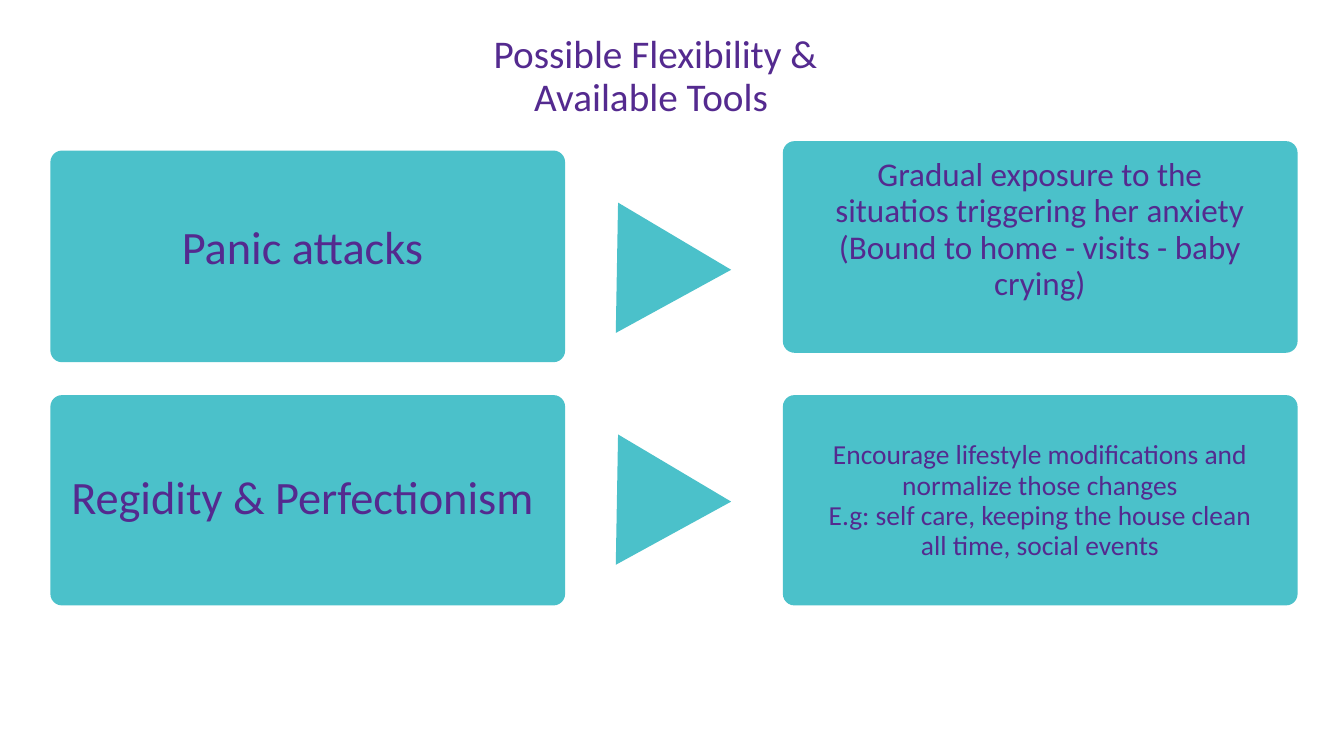
"""Build the slide pairing two difficulties with their available tools."""
from pptx import Presentation
from pptx import util as u
from pptx.dml.color import RGBColor
from pptx.enum import shapes, text

TEAL = RGBColor(0x4B, 0xC1, 0xCA)
PURPLE = RGBColor(0x54, 0x2A, 0x8F)
FONT = {"name": "Calibri", "bold": False}

prs = Presentation()
prs.slide_width, prs.slide_height = u.Inches(20), u.Inches(11.25)
COL, ROW = prs.slide_width / 20, prs.slide_height / 11.25
s = prs.slides.add_slide(prs.slide_layouts[6])


def add_block(kind, left, top, width, height):
    sp = s.shapes.add_shape(kind, int(left * COL), int(top * ROW), int(width * COL), int(height * ROW))
    sp.shadow.inherit = False
    sp.fill.solid()
    sp.fill.fore_color.rgb = TEAL
    sp.line.fill.background()
    return sp


def add_text(lines, left, top, width, height, size, spacing):
    tf = s.shapes.add_textbox(int(left * COL), int(top * ROW), int(width * COL), int(height * ROW)).text_frame
    frame = {"word_wrap": True, "margin_left": 0, "margin_top": 0, "margin_right": 0, "margin_bottom": 0}
    for key, value in frame.items():
        setattr(tf, key, value)
    for i, line in enumerate(lines):
        p = tf.paragraphs[0] if i == 0 else tf.add_paragraph()
        p.alignment = text.PP_ALIGN.CENTER
        p.line_spacing = u.Pt(spacing)
        r = p.add_run()
        r.text = line
        for key, value in {**FONT, "size": u.Pt(size)}.items():
            setattr(r.font, key, value)
        r.font.color.rgb = PURPLE


LEFT, RIGHT, CARD_W = 0.75, 11.65, 7.66
NOTE_X, NOTE_W = 12.24, 6.47

for left, top, height in [(LEFT, 2.24, 3.15), (LEFT, 5.88, 3.13), (RIGHT, 2.1, 3.15), (RIGHT, 5.88, 3.13)]:
    card = add_block(shapes.MSO_SHAPE.ROUNDED_RECTANGLE, left, top, CARD_W, height)
    card.adjustments[0] = 0.055

for top in (3.15, 6.6):
    pointer = add_block(shapes.MSO_SHAPE.ISOSCELES_TRIANGLE, 9.06, top, 1.94, 1.7)
    pointer.rotation = 91

add_text(["Possible Flexibility & Available Tools "], 6.52, 0.49, NOTE_W, 1.3, 42, 46.2)
for label, top, height in [("Panic attacks ", 3.32, 0.77), ("Regidity & Perfectionism ", 7.03, 1.52)]:
    add_text([label], LEFT, top, CARD_W, height, 49.7, 54.7)
add_text(
    ["Gradual exposure to the situatios triggering her anxiety", "(Bound to home - visits - baby crying)"],
    NOTE_X, 2.33, NOTE_W, 2.71, 35.5, 39)
add_text(
    ["Encourage lifestyle modifications and normalize those changes",
     "E.g: self care, keeping the house clean all time, social events"],
    NOTE_X, 6.55, NOTE_W, 1.8, 29.4, 32.4)

prs.save("out.pptx")
